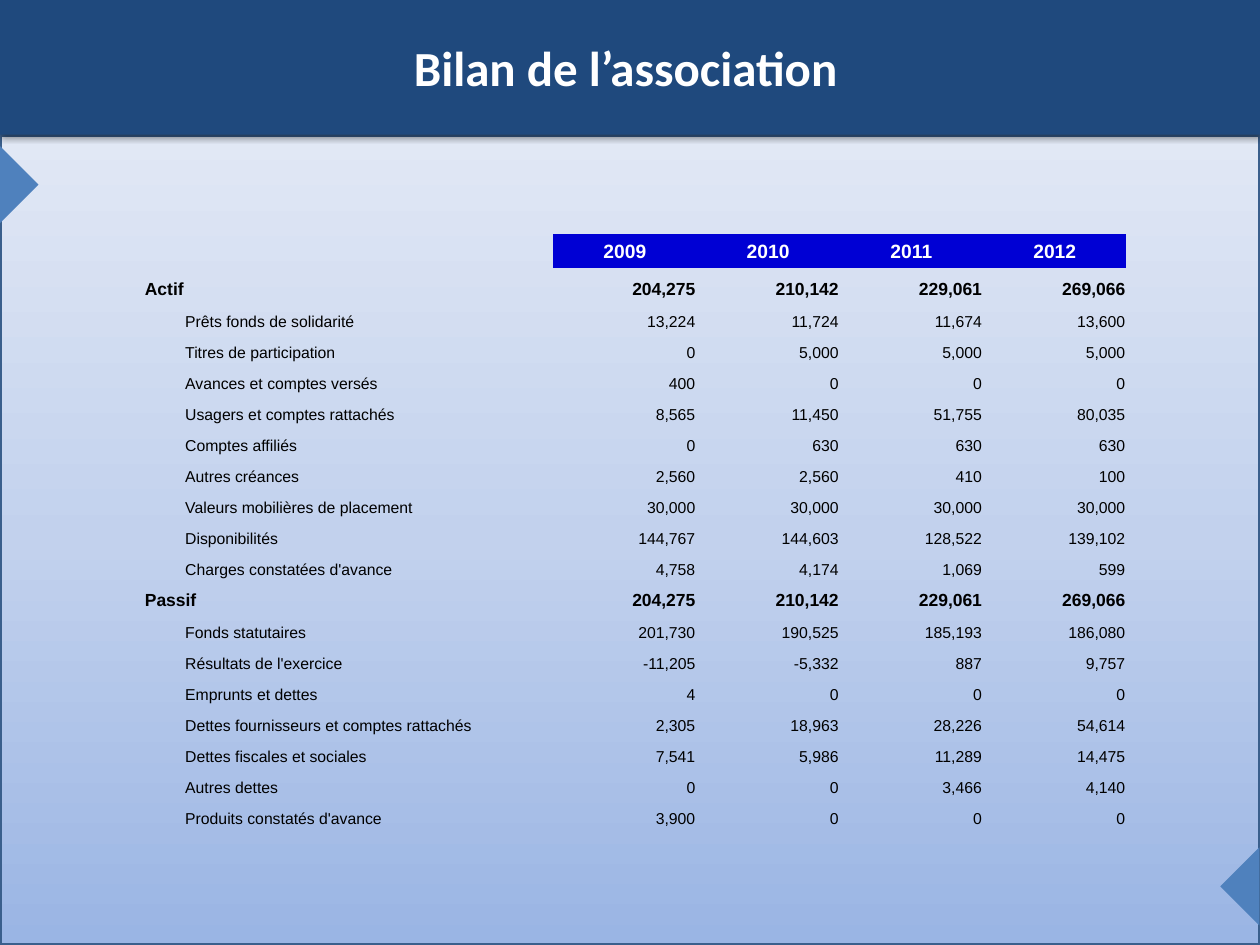
from copy import deepcopy
from dataclasses import dataclass

from lxml.etree import SubElement
from pptx import Presentation
from pptx.dml.color import RGBColor
from pptx.enum.shapes import MSO_SHAPE as Shape
from pptx.enum.text import MSO_ANCHOR as Anchor, PP_ALIGN as Align
from pptx.oxml.ns import qn
from pptx.util import Inches, Pt

NAVY, BLUE, BORDER, HEADER = "1F497D", "4F81BD", "3A5F8C", "0000D4"
WHITE, BLACK = "FFFFFF", "000000"
NO_GRID_STYLE = "{2D5ABB26-0587-4C30-8999-92F81FD0307C}"
YEARS = ["2009", "2010", "2011", "2012"]
TABLE_WIDTH, TABLE_HEIGHT = 7.8, 4.72
LABEL_WIDTH, HEADER_HEIGHT = 3.25, 0.27


@dataclass
class Entry:
    label: str
    values: str
    total: bool = False


@dataclass
class Pointer:
    left: float
    top: float
    rotation: int


ENTRIES = [
    Entry("Actif", "204,275 210,142 229,061 269,066", True),
    Entry("Prêts fonds de solidarité", "13,224 11,724 11,674 13,600"),
    Entry("Titres de participation", "0 5,000 5,000 5,000"),
    Entry("Avances et comptes versés", "400 0 0 0"),
    Entry("Usagers et comptes rattachés", "8,565 11,450 51,755 80,035"),
    Entry("Comptes affiliés", "0 630 630 630"),
    Entry("Autres créances", "2,560 2,560 410 100"),
    Entry("Valeurs mobilières de placement", "30,000 30,000 30,000 30,000"),
    Entry("Disponibilités", "144,767 144,603 128,522 139,102"),
    Entry("Charges constatées d'avance", "4,758 4,174 1,069 599"),
    Entry("Passif", "204,275 210,142 229,061 269,066", True),
    Entry("Fonds statutaires", "201,730 190,525 185,193 186,080"),
    Entry("Résultats de l'exercice", "-11,205 -5,332 887 9,757"),
    Entry("Emprunts et dettes", "4 0 0 0"),
    Entry("Dettes fournisseurs et comptes rattachés", "2,305 18,963 28,226 54,614"),
    Entry("Dettes fiscales et sociales", "7,541 5,986 11,289 14,475"),
    Entry("Autres dettes", "0 0 3,466 4,140"),
    Entry("Produits constatés d'avance", "3,900 0 0 0"),
]
POINTERS = [Pointer(-0.16, 1.31, 90), Pointer(9.53, 6.88, 270)]


def color(value: str) -> RGBColor:
    return RGBColor.from_string(value)


def add_span(para, text: str, font: str, size: int, fill: str, bold: bool) -> None:
    span = para.add_run()
    span.text = text
    span.font.name = font
    span.font.size = Pt(size)
    span.font.bold = bold
    span.font.color.rgb = color(fill)


def add_block(page, kind, left: float, top: float, width: float, height: float, fill: str):
    block = page.shapes.add_shape(
        kind, Inches(left), Inches(top), Inches(width), Inches(height))
    block.shadow.inherit = False
    block.fill.solid()
    block.fill.fore_color.rgb = color(fill)
    block.line.fill.background()
    return block


def add_backdrop(page) -> None:
    backdrop = add_block(page, Shape.RECTANGLE, 0, 1.07, 10, 6.43, WHITE)
    backdrop.line.color.rgb = color(BORDER)
    backdrop.line.width = Pt(2)
    backdrop.fill.gradient()
    backdrop.fill.gradient_angle = 90
    stops = backdrop._element.spPr.find(qn("a:gradFill")).find(qn("a:gsLst"))
    stops.append(deepcopy(stops[0]))
    shades = [(0, "9AB5E4"), (0.5, "C2D1ED"), (1, "E1E8F5")]
    for stop, (position, shade) in zip(backdrop.fill.gradient_stops, shades):
        stop.position = position
        stop.color.rgb = color(shade)


def add_banner(page) -> None:
    banner = add_block(page, Shape.RECTANGLE, 0, 0, 10, 1.07, NAVY)
    effects = banner._element.spPr.find(qn("a:effectLst"))
    shadow = SubElement(effects, qn("a:outerShdw"), blurRad=str(Pt(3.1)),
                        dist=str(Pt(1.8)), dir="5400000", rotWithShape="0")
    tint = SubElement(shadow, qn("a:srgbClr"), val=BLACK)
    SubElement(tint, qn("a:alpha"), val="35000")


def add_title(page, text: str) -> None:
    box = page.shapes.add_textbox(Inches(0.98), Inches(0.21), Inches(7.97), Inches(0.64))
    frame = box.text_frame
    frame.word_wrap = True
    frame.vertical_anchor = Anchor.MIDDLE
    para = frame.paragraphs[0]
    para.alignment = Align.CENTER
    add_span(para, text, "Calibri", 28, WHITE, True)


def fill_cell(cell, text: str, size: int, ink: str, bold: bool, align,
              anchor=Anchor.BOTTOM, indent: float = 0.01) -> None:
    cell.margin_left = Inches(indent)
    cell.margin_top = cell.margin_right = Inches(0.01)
    cell.margin_bottom = 0
    cell.vertical_anchor = anchor
    cell.fill.background()
    para = cell.text_frame.paragraphs[0]
    para.alignment = align
    if text:
        add_span(para, text, "Arial", size, ink, bold)
    else:
        para._p.get_or_add_endParaRPr().set("sz", str(size * 100))


def add_balance_sheet(page) -> None:
    table = page.shapes.add_table(
        len(ENTRIES) + 1, len(YEARS) + 1, Inches(1.14), Inches(1.86),
        Inches(TABLE_WIDTH), Inches(TABLE_HEIGHT)).table
    table.first_row = table.horz_banding = False
    table._tbl.tblPr.find(qn("a:tableStyleId")).text = NO_GRID_STYLE
    for index, column in enumerate(table.columns):
        year_width = (TABLE_WIDTH - LABEL_WIDTH) / len(YEARS)
        column.width = Inches(year_width if index else LABEL_WIDTH)
    for index, row in enumerate(table.rows):
        entry_height = (TABLE_HEIGHT - HEADER_HEIGHT) / len(ENTRIES)
        row.height = Inches(entry_height if index else HEADER_HEIGHT)

    for index, text in enumerate(["", *YEARS]):
        cell = table.cell(0, index)
        fill_cell(cell, text, 11, WHITE, True, Align.CENTER, Anchor.MIDDLE)
        if text:
            cell.fill.solid()
            cell.fill.fore_color.rgb = color(HEADER)
    for number, entry in enumerate(ENTRIES, 1):
        size = 10 if entry.total else 9
        indent = 0.01 if entry.total else 0.33
        fill_cell(table.cell(number, 0), entry.label, size, BLACK, entry.total,
                  Align.LEFT, indent=indent)
        for index, value in enumerate(entry.values.split(), 1):
            fill_cell(table.cell(number, index), value, size, BLACK, entry.total, Align.RIGHT)


def main() -> None:
    deck = Presentation()
    deck.slide_width, deck.slide_height = Inches(10), Inches(7.5)
    page = deck.slides.add_slide(deck.slide_layouts[6])
    add_backdrop(page)
    for pointer in POINTERS:
        triangle = add_block(page, Shape.ISOSCELES_TRIANGLE, pointer.left, pointer.top,
                             0.62, 0.31, BLUE)
        triangle.rotation = pointer.rotation
    add_banner(page)
    add_title(page, "Bilan de l’association")
    add_balance_sheet(page)
    deck.save("out.pptx")


if __name__ == "__main__":
    main()
